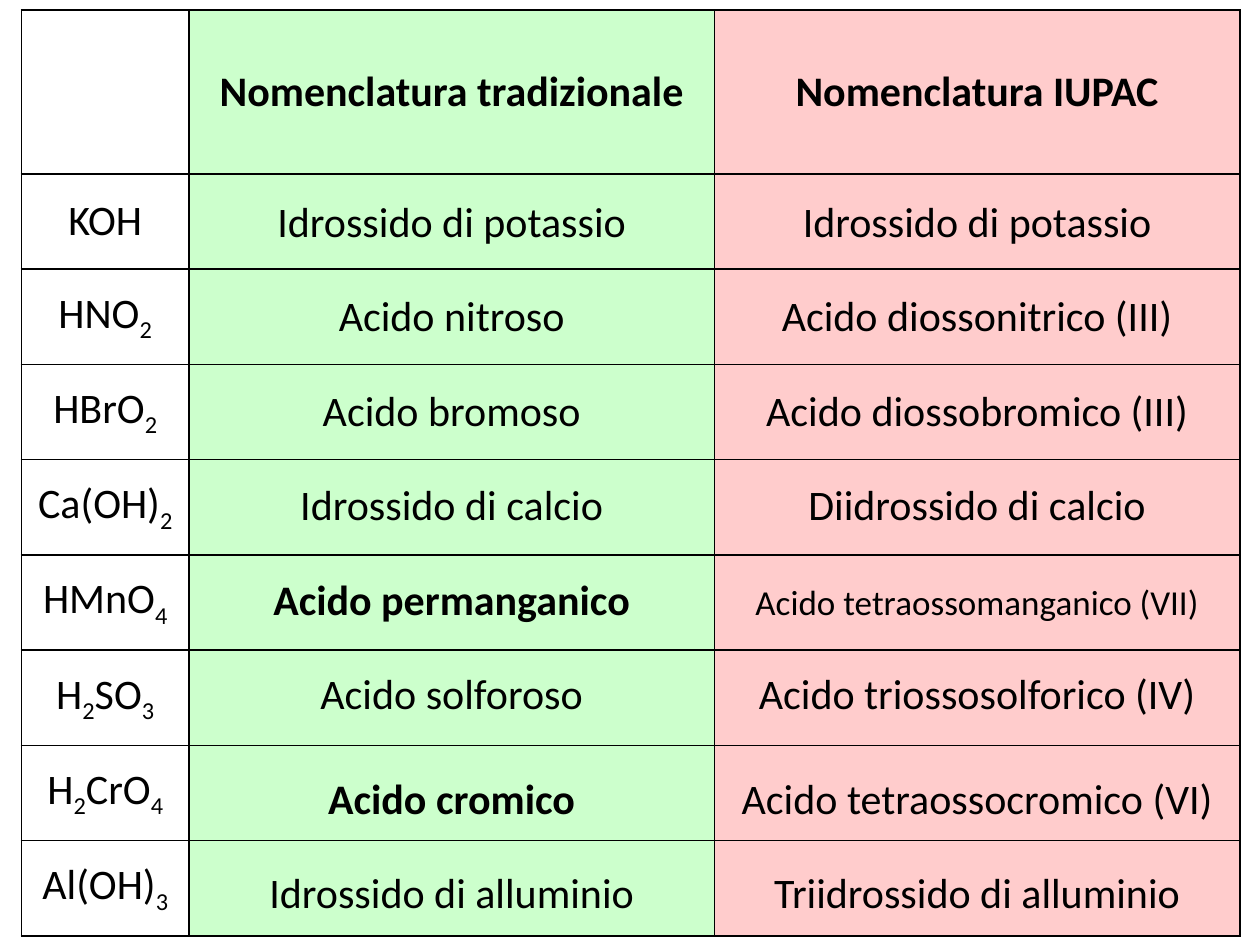
from itertools import groupby

from lxml.etree import SubElement
from pptx import Presentation
from pptx.dml.color import RGBColor
from pptx.enum.text import MSO_ANCHOR, MSO_AUTO_SIZE, PP_ALIGN
from pptx.oxml.ns import qn
from pptx.util import Inches, Pt

BLACK, WHITE, GREEN, PINK = "000000", "FFFFFF", "CCFFCC", "FFCCCC"
LEFT, TOP = 0.17, 0.08
COLS = [1.33, 4.17, 4.17]
HEADER_H, ROW_H = 1.3, 6.05 / 8
NAME_H = 0.5

HEADERS = ["", "Nomenclatura tradizionale", "Nomenclatura IUPAC"]
# Formula, top of the names, traditional name, IUPAC name
COMPOUNDS = [
    ("KOH", 1.5, "Idrossido di potassio", "Idrossido di potassio"),
    ("HNO2", 2.25, "Acido nitroso", "Acido diossonitrico (III)"),
    ("HBrO2", 3, "Acido bromoso", "Acido diossobromico (III)"),
    ("Ca(OH)2", 3.75, "Idrossido di calcio", "Diidrossido di calcio"),
    ("HMnO4", 4.5, "Acido permanganico", "Acido tetraossomanganico (VII)"),
    ("H2SO3", 5.25, "Acido solforoso", "Acido triossosolforico (IV)"),
    ("H2CrO4", 6.08, "Acido cromico", "Acido tetraossocromico (VI)"),
    ("Al(OH)3", 6.83, "Idrossido di alluminio", "Triidrossido di alluminio"),
]
BOLD_NAMES = {"Acido permanganico", "Acido cromico"}
SMALL_NAMES = {"Acido tetraossomanganico (VII)"}


def rgb(value):
    return RGBColor.from_string(value)


class Deck:
    font, size = "Calibri", 24

    def __init__(self, width, height):
        self.prs = Presentation()
        self.prs.slide_width, self.prs.slide_height = Inches(width), Inches(height)
        self.slide = self.prs.slides.add_slide(self.prs.slide_layouts[6])

    def run(self, p, text, size=None, bold=False, subscript=False):
        p.alignment = PP_ALIGN.CENTER
        r = p.add_run()
        r.text = text
        r.font.name, r.font.size, r.font.bold = self.font, Pt(size or self.size), bold
        r.font.color.rgb = rgb(BLACK)
        if subscript:
            r._r.get_or_add_rPr().set("baseline", "-25000")

    def formula(self, p, text):
        for is_digit, chars in groupby(text, str.isdigit):
            self.run(p, "".join(chars), subscript=is_digit)

    def text(self, left, top, width, height, text, size=None, bold=False):
        sp = self.slide.shapes.add_textbox(
            Inches(left), Inches(top), Inches(width), Inches(height))
        tf = sp.text_frame
        tf.word_wrap = True
        tf.auto_size = MSO_AUTO_SIZE.SHAPE_TO_FIT_TEXT
        self.run(tf.paragraphs[0], text, size, bold)

    def cell(self, cell, fill):
        tc_pr = cell._tc.get_or_add_tcPr()
        for side in ("lnL", "lnR", "lnT", "lnB"):
            ln = SubElement(tc_pr, qn(f"a:{side}"), w=str(Pt(1)))
            solid = SubElement(ln, qn("a:solidFill"))
            SubElement(solid, qn("a:srgbClr"), val=BLACK)
        cell.fill.solid()
        cell.fill.fore_color.rgb = rgb(fill)
        cell.vertical_anchor = MSO_ANCHOR.MIDDLE

    def table(self, left, top, cols, rows, fills):
        table = self.slide.shapes.add_table(
            len(rows), len(cols), Inches(left), Inches(top),
            Inches(sum(cols)), Inches(sum(rows))).table
        table.first_row = table.horz_banding = False
        for column, width in zip(table.columns, cols):
            column.width = Inches(width)
        for row, height in zip(table.rows, rows):
            row.height = Inches(height)
            for cell, fill in zip(row.cells, fills):
                self.cell(cell, fill)
        return table


def main():
    deck = Deck(10, 7.5)

    # Table with headers and formulas
    rows = [HEADER_H] + [ROW_H] * len(COMPOUNDS)
    table = deck.table(LEFT, TOP, COLS, rows, [WHITE, GREEN, PINK])
    for col, header in enumerate(HEADERS):
        if header:
            deck.run(table.cell(0, col).text_frame.paragraphs[0], header, bold=True)
    for row, compound in enumerate(COMPOUNDS, 1):
        deck.formula(table.cell(row, 0).text_frame.paragraphs[0], compound[0])

    # Names laid over the two coloured columns
    for _, top, *names in COMPOUNDS:
        for col, name in enumerate(names, 1):
            small = name in SMALL_NAMES
            drop = 0.06 if small else 0
            deck.text(LEFT + sum(COLS[:col]), top + drop, COLS[col], NAME_H - drop,
                      name, size=20 if small else None, bold=name in BOLD_NAMES)

    deck.prs.save("out.pptx")


if __name__ == "__main__":
    main()
